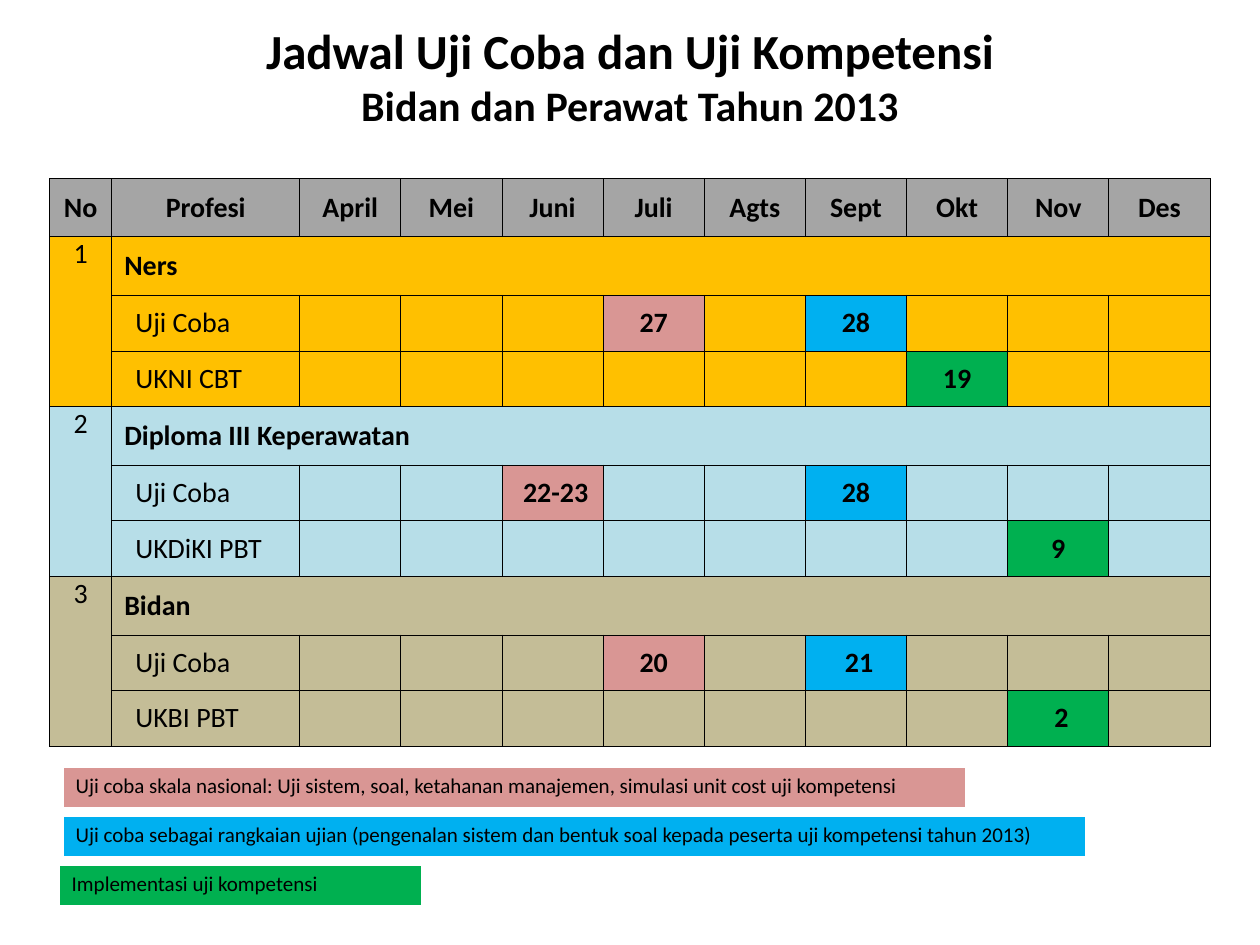
from lxml import etree
from pptx import Presentation
from pptx.dml.color import RGBColor
from pptx.enum.text import MSO_ANCHOR, PP_ALIGN
from pptx.oxml.ns import qn
from pptx.util import Pt

LEFT, MID = PP_ALIGN.LEFT, PP_ALIGN.CENTER
TOP, CENTER = MSO_ANCHOR.TOP, MSO_ANCHOR.MIDDLE

FONT = "Calibri"
BLACK, WHITE, GRAY = "000000", "FFFFFF", "A5A5A5"
PINK, BLUE, GREEN = "D99694", "00B0F0", "00B050"
THIN = dict.fromkeys("LRTB", 0.5)
FRAME = {"L": 1, "R": 1, "T": 1, "B": 3}

HEADS = ["No", "Profesi", "April", "Mei", "Juni", "Juli", "Agts",
         "Sept", "Okt", "Nov", "Des"]
WIDTHS = [35.6, 107.4] + [57.8] * 9
HEAD_H, GROUP_H = 33.3, [33.5, 31.8, 31.8]

# Each group: name, fill, and its rows of (label, {month: (date, fill)})
GROUPS = [
    ("Ners", "FFC000", [
        ("Uji Coba", {"Juli": ("27", PINK), "Sept": ("28", BLUE)}),
        ("UKNI CBT", {"Okt": ("19", GREEN)})]),
    ("Diploma III Keperawatan", "B7DEE8", [
        ("Uji Coba", {"Juni": (" 22-23", PINK), "Sept": ("28", BLUE)}),
        ("UKDiKI PBT", {"Nov": ("9", GREEN)})]),
    ("Bidan", "C4BD97", [
        ("Uji Coba", {"Juli": ("20", PINK), "Sept": (" 21", BLUE)}),
        ("UKBI PBT", {"Nov": (" 2", GREEN)})]),
]

# Legend: left, top, width, fill, text
LEGEND = [
    (36, 438.5, 516, PINK, "Uji coba skala nasional: Uji sistem, soal, "
     "ketahanan manajemen, simulasi unit cost uji kompetensi"),
    (36, 466.5, 584.6, BLUE, "Uji coba sebagai rangkaian ujian (pengenalan "
     "sistem dan bentuk soal kepada peserta uji kompetensi tahun 2013)"),
    (33.8, 494.5, 207.4, GREEN, "Implementasi uji kompetensi"),
]


def color(code):
    return RGBColor.from_string(code)


def style(run, size, bold):
    font = run.font
    font.name, font.size, font.bold = FONT, Pt(size), bold
    font.color.rgb = color(BLACK)


def edge(cell, code, sides):
    props = cell._tc.get_or_add_tcPr()
    for side, width in sides.items():
        line = etree.SubElement(props, qn("a:ln" + side), w=str(Pt(width)))
        fill = etree.SubElement(line, qn("a:solidFill"))
        etree.SubElement(fill, qn("a:srgbClr"), val=code)


def paint(cell, fill, line=BLACK, sides=THIN):
    edge(cell, line, sides)
    cell.fill.solid()
    cell.fill.fore_color.rgb = color(fill)


def write(cell, text, size=16, bold=True, align=MID, anchor=CENTER, inset=0):
    cell.text_frame.text = text
    cell.vertical_anchor = anchor
    cell.margin_left = Pt(inset)
    para = cell.text_frame.paragraphs[0]
    para.alignment = align
    for run in para.runs:
        style(run, size, bold)


def add_grid(slide, left, top, widths, heights):
    frame = slide.shapes.add_table(
        len(heights), len(widths), Pt(left), Pt(top),
        Pt(sum(widths)), Pt(sum(heights)))
    grid = frame.table
    grid.first_row = grid.horz_banding = False
    for col, width in zip(grid.columns, widths):
        col.width = Pt(width)
    for row, height in zip(grid.rows, heights):
        row.height = Pt(height)
    return grid


def add_title(slide):
    box = slide.shapes.add_textbox(0, 0, Pt(720), Pt(86.4))
    frame = box.text_frame
    frame.word_wrap = True
    frame.vertical_anchor = CENTER
    frame.text = "Jadwal Uji Coba dan Uji Kompetensi\vBidan dan Perawat Tahun 2013"
    para = frame.paragraphs[0]
    para.alignment = MID
    for run, size in zip(para.runs, (28, 24)):
        style(run, size, True)


def add_plan(slide):
    heights = [HEAD_H] + GROUP_H * len(GROUPS)
    grid = add_grid(slide, 28.3, 102, WIDTHS, heights)
    for cell in grid.iter_cells():
        cell.margin_left = cell.margin_right = 0
        cell.margin_top = cell.margin_bottom = 0

    # Header row
    for col, head in enumerate(HEADS):
        paint(grid.cell(0, col), GRAY)
        write(grid.cell(0, col), head)

    last = len(HEADS) - 1
    for num, (name, fill, rows) in enumerate(GROUPS):
        top = 1 + num * len(GROUP_H)
        end = top + len(rows)

        # Fills of the group, with the marked dates
        for row in range(top, end + 1):
            dates = rows[row - top - 1][1] if row > top else {}
            for col, head in enumerate(HEADS):
                text, shade = dates.get(head, ("", fill))
                paint(grid.cell(row, col), shade)
                write(grid.cell(row, col), text)

        # Number, group name and row labels
        grid.cell(top, 0).merge(grid.cell(end, 0))
        grid.cell(top, 1).merge(grid.cell(top, last))
        write(grid.cell(top, 0), str(num + 1), bold=False, anchor=TOP)
        write(grid.cell(top, 1), name, align=LEFT, inset=7.2)
        for row, (label, _) in enumerate(rows, top + 1):
            write(grid.cell(row, 1), label, bold=False, align=LEFT, inset=13.5)


def add_key(slide, left, top, width, fill, text):
    cell = add_grid(slide, left, top, [width], [23.8]).cell(0, 0)
    paint(cell, fill, WHITE, FRAME)
    write(cell, text, size=12, bold=False, align=LEFT, anchor=TOP, inset=7.2)


def main():
    deck = Presentation()
    deck.slide_width, deck.slide_height = Pt(720), Pt(540)
    slide = deck.slides.add_slide(deck.slide_layouts[6])
    add_title(slide)
    add_plan(slide)
    for key in LEGEND:
        add_key(slide, *key)
    deck.save("out.pptx")


if __name__ == "__main__":
    main()
